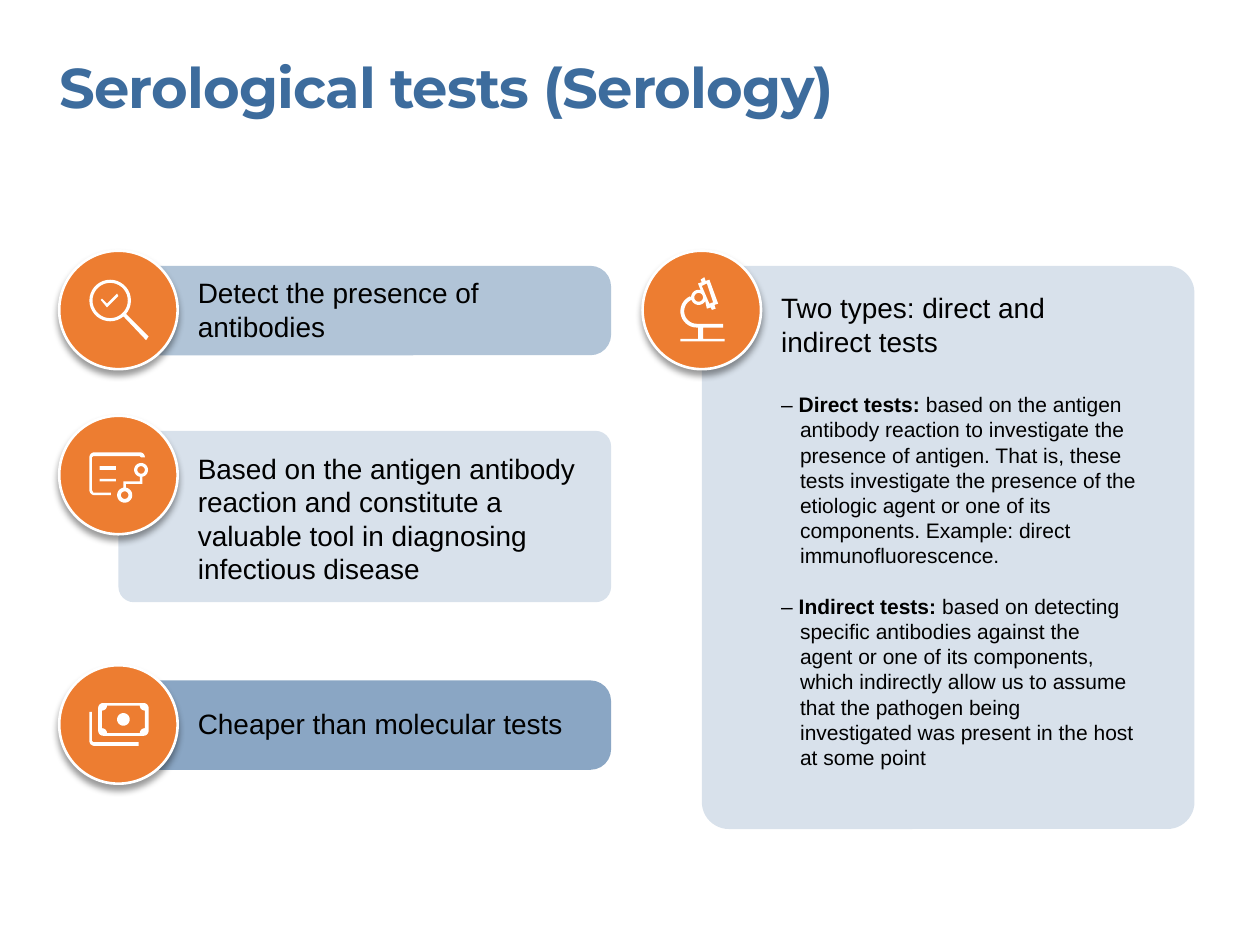
from math import cos, radians, sin

from lxml.etree import SubElement
from pptx import Presentation
from pptx.dml.color import RGBColor
from pptx.enum.shapes import MSO_SHAPE
from pptx.enum.text import MSO_ANCHOR, MSO_AUTO_SIZE, PP_ALIGN
from pptx.oxml.ns import qn
from pptx.util import Inches, Pt


def paint(fill, colour):
    fill.solid()
    fill.fore_color.rgb = RGBColor.from_string(colour)


def arc(cx, cy, r, start=0, end=360):
    """Points along an arc, in degrees clockwise from the right."""
    n = max(6, abs(end - start) // 10)
    angles = [radians(start + (end - start) * i / n) for i in range(n + 1)]
    return [(cx + r * cos(a), cy + r * sin(a)) for a in angles]


BLUE, ORANGE, WHITE, BLACK = "3D6C9D", "ED7D31", "FFFFFF", "000000"
LEFT, RIGHT = 0.47, 5.1
DISC = 0.94
CARD_W = 3.91
CARD_DROP = 0.12
TEXT_INDENT = 1.1
HANG = 0.15
LEADING = 1.2

# Icon outlines, in hundredths of an inch from the disc's top left corner
magnifier = [
    arc(40.5, 39.5, 16.5, 50, 400) + [(71, 68), (69, 71)],
    arc(40.5, 39.5, 14),
    [(38, 45), (33, 39), (34, 38), (38, 42), (46, 34), (47, 36)],
]
board = [
    arc(28, 59, 4, 90, 180) + arc(28, 33, 4, 180, 270) + arc(64, 33, 4, 270, 360)
    + [(65, 33), (64, 32), (27, 32), (26, 33), (26, 59), (27, 61), (41, 61), (41, 63)],
    [(32, 40), (45, 40), (45, 43), (32, 43)],
    [(32, 50), (45, 50), (45, 52), (32, 52)],
    arc(52, 63, 6, -80, 260) + [(51, 52), (64, 52)]
    + arc(65, 43, 5.5, 100, 440) + [(66, 54), (53, 54)],
    arc(52, 63, 3),
    arc(65, 43, 3),
]
banknotes = [
    arc(51, 43, 5),
    arc(67, 52, 4, 0, 90) + arc(35, 52, 4, 90, 180)
    + arc(35, 34, 4, 180, 270) + arc(67, 34, 4, 270, 360),
    arc(68, 54, 4, 180, 270) + arc(68, 32, 4, 90, 180)
    + arc(34, 32, 4, 0, 90) + arc(34, 54, 4, -90, 0),
    [(63, 64)] + arc(28, 60, 4, 90, 180)
    + [(24, 37), (26, 37), (26, 60), (27, 61), (63, 61)],
]
microscope = [
    [(30, 72), (30, 70), (44, 70), (44, 61)] + arc(43, 48, 13, 90, 245)
    + arc(44.5, 37, 6, 180, 285)
    + [(44, 26), (47, 25), (46, 23), (49, 21), (50, 24), (53, 23), (60, 42),
       (57, 43), (58, 46), (55, 47), (54, 45), (51, 46)]
    + arc(44.5, 37, 6, 30, 150) + arc(43, 48, 10, 245, 90)
    + [(64, 58), (64, 61), (48, 61), (48, 70), (65, 70), (65, 72)],
    [(53, 42), (56, 41), (51, 26), (47, 28)],
    arc(44.5, 37, 3.5),
]

# column, disc top, card height, corner, opacity %, text top, text size, icon, paragraphs
cards = [
    (RIGHT, 1.99, 4.47, 0.055, 20, 2.31, (2.82, 3.84), microscope, [
        [("Two types: direct and indirect tests", False)],
        [("– ", False), ("Direct tests:", True),
         (" based on the antigen antibody reaction to investigate the presence of "
          "antigen. That is, these tests investigate the presence of the etiologic "
          "agent or one of its components. Example: direct immunofluorescence.", False)],
        [("– ", False), ("Indirect tests:", True),
         (" based on detecting specific antibodies against the agent or one of its "
          "components, which indirectly allow us to assume that the pathogen being "
          "investigated was present in the host at some point", False)],
    ]),
    (LEFT, 1.99, 0.71, 0.231, 40, 2.19, (3.01, 0.54), magnifier,
     [[("Detect the presence of antibodies", False)]]),
    (LEFT, 5.28, 0.71, 0.231, 60, 5.61, (3.01, 0.27), banknotes,
     [[("Cheaper than molecular tests", False)]]),
    (LEFT, 3.3, 1.36, 0.09, 20, 3.58, (3.01, 1.08), board,
     [[("Based on the antigen antibody reaction and constitute a valuable tool "
        "in diagnosing infectious disease", False)]]),
]

prs = Presentation()
prs.slide_width, prs.slide_height = Inches(10), Inches(7.5)
s = prs.slides.add_slide(prs.slide_layouts[5])

title = s.shapes.title
title.left, title.top = Inches(LEFT), Inches(0.42)
title.width, title.height = Inches(8.55), Inches(0.54)
tf = title.text_frame
tf.text = "Serological tests (Serology)"
tf.margin_left = tf.margin_right = tf.margin_top = tf.margin_bottom = 0
tf.vertical_anchor = MSO_ANCHOR.TOP
tf.auto_size = MSO_AUTO_SIZE.NONE
p = tf.paragraphs[0]
p.alignment = PP_ALIGN.LEFT
r = p.runs[0]
r.font.name, r.font.size, r.font.bold = "Montserrat", Pt(32), True
paint(r.font.fill, BLUE)
r._r.get_or_add_rPr().set("spc", "-50")

for x, y, h, corner, opacity, text_y, (text_w, text_h), icon, paragraphs in cards:
    card = s.shapes.add_shape(MSO_SHAPE.ROUNDED_RECTANGLE, Inches(x + DISC / 2),
                              Inches(y + CARD_DROP), Inches(CARD_W), Inches(h))
    card.adjustments[0] = corner
    card.shadow.inherit = False
    card.line.fill.background()
    paint(card.fill, BLUE)
    colour = card._element.spPr.find(qn("a:solidFill"))[0]
    SubElement(colour, qn("a:alpha"), val=str(opacity * 1000))

    box = s.shapes.add_textbox(Inches(x + TEXT_INDENT), Inches(text_y),
                               Inches(text_w), Inches(text_h))
    tf = box.text_frame
    tf.word_wrap = True
    tf.margin_left = tf.margin_right = tf.margin_top = tf.margin_bottom = 0
    for i, runs in enumerate(paragraphs):
        p = tf.add_paragraph() if i else tf.paragraphs[0]
        size = 12 if i else 16
        p.line_spacing = Pt(size * LEADING)
        if i:
            p.space_before = Pt((16 if i == 1 else 12) * LEADING)
            pPr = p._p.get_or_add_pPr()
            pPr.set("marL", str(Inches(HANG)))
            pPr.set("indent", str(-Inches(HANG)))
        for text, bold in runs:
            r = p.add_run()
            r.text = text
            r.font.name, r.font.size, r.font.bold = "Arial", Pt(size), bold
            paint(r.font.fill, BLACK)

    disc = s.shapes.add_shape(MSO_SHAPE.OVAL, Inches(x), Inches(y), Inches(DISC), Inches(DISC))
    paint(disc.fill, ORANGE)
    paint(disc.line.fill, WHITE)
    disc.line.width = Pt(1.5)
    disc.shadow.inherit = False
    effects = disc._element.spPr.find(qn("a:effectLst"))
    shadow = SubElement(effects, qn("a:outerShdw"), blurRad=str(Pt(4)), dist=str(Pt(3)),
                        dir="5400000", algn="t", rotWithShape="0")
    colour = SubElement(shadow, qn("a:srgbClr"), val=BLACK)
    SubElement(colour, qn("a:alpha"), val="40000")

    outlines = [[(Inches(x + px / 100), Inches(y + py / 100)) for px, py in outline]
                for outline in icon]
    pen = s.shapes.build_freeform(*outlines[0][0], scale=1.0)
    for i, outline in enumerate(outlines):
        if i:
            pen.move_to(*outline[0])
        pen.add_line_segments(outline[1:], close=True)
    sp = pen.convert_to_shape()
    sp.shadow.inherit = False
    sp.line.fill.background()
    paint(sp.fill, WHITE)

prs.save("out.pptx")
